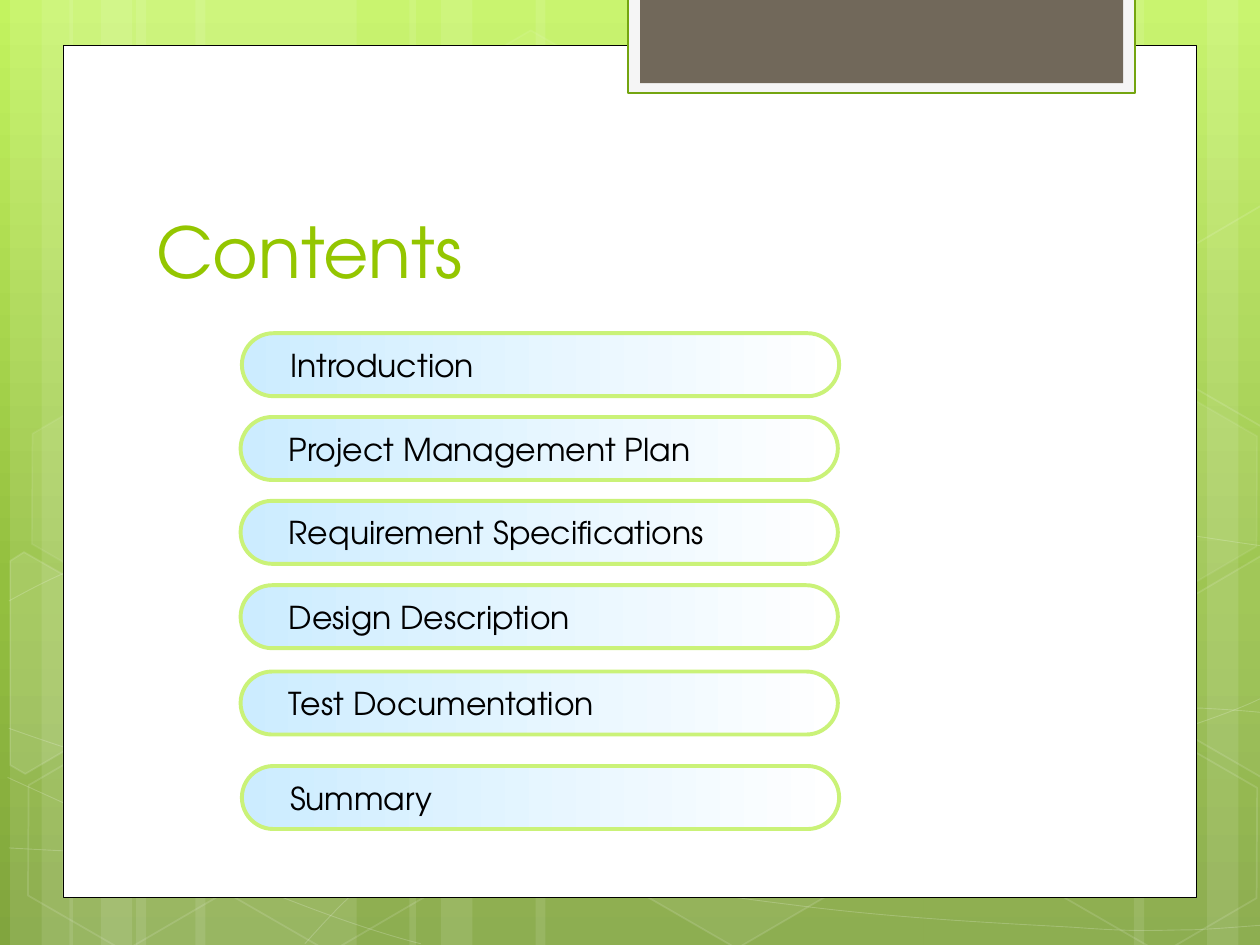
from copy import deepcopy
from dataclasses import dataclass
from math import cos, radians, sin

from lxml.etree import SubElement
from pptx import Presentation
from pptx.dml.color import RGBColor
from pptx.enum.shapes import MSO_SHAPE
from pptx.enum.text import MSO_ANCHOR, PP_ALIGN
from pptx.oxml.ns import qn
from pptx.util import Inches, Pt

SLIDE_WIDTH, SLIDE_HEIGHT = Inches(10), Inches(7.5)
COLUMN, ROW = SLIDE_WIDTH / 100, SLIDE_HEIGHT / 75
FONT = "TeX Gyre Adventor"
TILT = 30

WHITE = RGBColor(0xFF, 0xFF, 0xFF)
BLACK = RGBColor(0x00, 0x00, 0x00)
LIME = RGBColor(0xC3, 0xF3, 0x5F)
LEAF = RGBColor(0x93, 0xBF, 0x3F)
MOSS = RGBColor(0x81, 0xA5, 0x3E)
TAB_FRAME = RGBColor(0xF5, 0xF5, 0xF5)
TAB_EDGE = RGBColor(0x74, 0xA5, 0x10)
TAB_BROWN = RGBColor(0x71, 0x68, 0x5A)
TITLE_GREEN = RGBColor(0x94, 0xC6, 0x00)
PILL_BLUE = RGBColor(0xCC, 0xEC, 0xFF)
PILL_EDGE = RGBColor(0xCA, 0xF2, 0x78)

STRIPES = [(10.8, 17.5), (0.8, 5), (3.3, 8.3), (15.5, 17.5), (5.5, 5), (8, 8.3),
           (73.3, 17.5), (95.8, 5), (90, 8.3), (42.5, 30.8), (32.5, 5), (35, 8.3)]
CURVES = [
    [(0.7, 67.3), (6.1, 67.6), (11.5, 67.9), (19, 67.8), (26.5, 67.7), (35.8, 67.5),
     (45.8, 66.5), (55.8, 65.5), (70, 63.6), (79.2, 61.7), (88.3, 59.8), (97.7, 56.8), (100.7, 55.1)],
    [(0.7, 47.7), (3.6, 46.1), (6.5, 44.6), (12.1, 43.1), (17.8, 41.6), (25.9, 39.4),
     (34.7, 38.7), (43.6, 38), (54.4, 37.9), (65.4, 38.7), (76.4, 39.5), (94.7, 42.6), (100.7, 43.4)],
    [(0.6, 61.7), (12.7, 67.2), (24.7, 72.7), (33.4, 74.9)],
    [(0.7, 57.8), (3.8, 58.9), (7, 60), (12.8, 61.6), (18.6, 63.1), (27.3, 65.6),
     (35.7, 67.3), (44, 69), (54.5, 70.8), (62.8, 71.8), (71.1, 72.9), (80, 73.3), (85.3, 73.6),
     (90.5, 74), (91.9, 73.8), (94.5, 73.8), (97.1, 73.7), (98.9, 73.5), (100.7, 73.4)],
    [(24.2, 74.9), (26, 72.9), (27.8, 70.9), (30.2, 69.1), (32.6, 67.3), (36, 65.3),
     (38.8, 63.9), (41.6, 62.5), (43.3, 61.9), (47, 60.9), (50.6, 59.9), (57.3, 58.5), (60.8, 57.8),
     (64.4, 57.1), (64.9, 57.1), (68, 56.9), (71.1, 56.6), (76, 56.3), (79.4, 56.2),
     (82.9, 56.1), (88.6, 56.2), (88.6, 56.2), (90.8, 56.2), (93.1, 56.2), (95.3, 56.2),
     (97.1, 56.3), (98.8, 56.4), (100.6, 56.6)],
]
HEXAGONS = [(33.4, 3.6, 4, 8), (49.7, 58.9, 6, 12), (1.1, 59.1, 0, 12), (1.4, 31.2, 7, 8),
            (17.4, 59.2, 0, 12), (75.3, 45.3, 10, 12), (83.4, 59.3, 0, 12), (83.4, 31.4, 7, 8)]
CUT_HEXAGONS = [
    ((3.6, 53.5), [(0.8, 44.5), (1.9, 43.8), (9.6, 48.2), (9.5, 57), (2, 61.4), (0.8, 60.7)], 10),
    ((98.5, 52), [(92.6, 48.5), (100.1, 44.1), (100.9, 44.6), (100.9, 61.3), (100.2, 61.7), (92.6, 57.3)], 4),
    ((98.5, 24.1), [(92.6, 20.7), (100.1, 16.3), (101, 16.8), (100.9, 33.5), (100.2, 33.9), (92.6, 29.5)], 0),
]
PILLS = [("Introduction", 0.1, 0), ("Project Management Plan", 0, 6.65),
         ("Requirement Specifications", 0, 13.3), ("Design Description", 0, 20),
         ("Test Documentation", 0, 26.85), ("Summary", 0.1, 34.35)]


@dataclass
class Box:
    left: float
    top: float
    width: float
    height: float

    def inner(self, left, top, width, height):
        return Box(self.left + left, self.top + top, width, height)

    def lengths(self):
        return (round(self.left * COLUMN), round(self.top * ROW),
                round(self.width * COLUMN), round(self.height * ROW))


def set_opacity(parent, percent):
    color = parent.find(qn("a:solidFill")).find(qn("a:srgbClr"))
    if percent < 100:
        SubElement(color, qn("a:alpha"), val=str(percent * 1000))


def style(shape, fill=None, fill_opacity=100, line=None, line_width=1, line_opacity=100):
    shape.shadow.inherit = False
    properties = shape._element.spPr
    if fill is None or fill_opacity == 0:
        shape.fill.background()
    else:
        shape.fill.solid()
        shape.fill.fore_color.rgb = fill
        set_opacity(properties, fill_opacity)
    if line is None:
        shape.line.fill.background()
    else:
        shape.line.color.rgb = line
        shape.line.width = Pt(line_width)
        set_opacity(properties.find(qn("a:ln")), line_opacity)


def add_outline(slide, box, points, closed):
    places = [(round((box.left + x) * COLUMN), round((box.top + y) * ROW)) for x, y in points]
    builder = slide.shapes.build_freeform(*places[0])
    builder.add_line_segments(places[1:], close=closed)
    return builder.convert_to_shape()


def add_curve(slide, box, controls):
    curve = add_outline(slide, box, controls, False)
    outline = next(curve._element.iter(qn("a:path")))
    segments = outline.findall(qn("a:lnTo"))
    for start in range(0, len(segments), 3):
        bezier = SubElement(outline, qn("a:cubicBezTo"))
        for segment in segments[start:start + 3]:
            bezier.append(segment[0])
            outline.remove(segment)
    return curve


def turn_back(points, center):
    cosine, sine = cos(radians(TILT)), sin(radians(TILT))
    offsets = [(x - center[0], y - center[1]) for x, y in points]
    return [(center[0] + x * cosine + y * sine, center[1] - x * sine + y * cosine) for x, y in offsets]


def add_text(frame, text, size, color, anchor):
    frame.word_wrap = True
    frame.vertical_anchor = anchor
    paragraph = frame.paragraphs[0]
    paragraph.alignment = PP_ALIGN.LEFT
    run = paragraph.add_run()
    run.text = text
    run.font.name = FONT
    run.font.size = Pt(size)
    run.font.color.rgb = color


def color_stops(fill, colors, positions):
    for stop, color, position in zip(fill.gradient_stops, colors, positions):
        stop.color.rgb = color
        stop.position = position


def set_background(slide):
    fill = slide.background.fill
    fill.gradient()
    fill.gradient_angle = 270
    stop_list = next(slide._element.iter(qn("a:gsLst")))
    stop_list.append(deepcopy(stop_list[-1]))
    color_stops(fill, (LIME, LEAF, MOSS), (0, 0.62, 1))


def add_backdrop(slide, box):
    for left, width in STRIPES:
        stripe = slide.shapes.add_shape(MSO_SHAPE.RECTANGLE, *box.inner(left, 0, width, box.height).lengths())
        style(stripe, WHITE, 10)
    for controls in CURVES:
        style(add_curve(slide, box, controls), line=WHITE, line_width=0.5, line_opacity=20)
    for left, top, opacity, line_opacity in HEXAGONS:
        hexagon = slide.shapes.add_shape(MSO_SHAPE.HEXAGON, *box.inner(left, top, 17.5, 15.2).lengths())
        hexagon.adjustments[0] = 0.285
        hexagon.rotation = TILT
        style(hexagon, WHITE, opacity, WHITE, 1, line_opacity)
    for center, points, opacity in CUT_HEXAGONS:
        cut_hexagon = add_outline(slide, box, turn_back(points, center), True)
        cut_hexagon.rotation = TILT
        style(cut_hexagon, WHITE, opacity, WHITE, 1, 12)


def add_page(slide, box):
    page = slide.shapes.add_shape(MSO_SHAPE.RECTANGLE, *box.lengths())
    style(page, WHITE, line=BLACK, line_width=0.5)


def add_tab(slide, box):
    frame = slide.shapes.add_shape(MSO_SHAPE.RECTANGLE, *box.lengths())
    style(frame, TAB_FRAME, line=TAB_EDGE, line_width=1.25)
    center = box.inner(0.95, 0, box.width - 1.9, box.height - 0.8)
    style(slide.shapes.add_shape(MSO_SHAPE.RECTANGLE, *center.lengths()), TAB_BROWN)


def add_title(slide, box):
    title = slide.shapes.add_textbox(*box.lengths())
    add_text(title.text_frame, "Contents", 40, TITLE_GREEN, MSO_ANCHOR.BOTTOM)


def add_contents(slide, box):
    for text, left, top in PILLS:
        pill = slide.shapes.add_shape(MSO_SHAPE.ROUNDED_RECTANGLE, *box.inner(left, top, box.width, 5).lengths())
        pill.adjustments[0] = 0.5
        style(pill, line=PILL_EDGE, line_width=2.25)
        pill.fill.gradient()
        pill.fill.gradient_angle = 0
        color_stops(pill.fill, (PILL_BLUE, WHITE), (0, 1))
        pill.text_frame.margin_left = round(3.1 * COLUMN)
        add_text(pill.text_frame, text, 18, BLACK, MSO_ANCHOR.MIDDLE)


def main():
    presentation = Presentation()
    presentation.slide_width, presentation.slide_height = SLIDE_WIDTH, SLIDE_HEIGHT
    slide = presentation.slides.add_slide(presentation.slide_layouts[6])
    set_background(slide)
    add_backdrop(slide, Box(0, 0, 100, 75))
    add_page(slide, Box(5, 3.6, 90, 67.65))
    add_tab(slide, Box(49.85, -0.2, 40.25, 7.6))
    add_title(slide, Box(11.4, 11.2, 76.8, 12.5))
    add_contents(slide, Box(19.1, 26.45, 47.4, 39.35))
    presentation.save("out.pptx")


if __name__ == "__main__":
    main()
